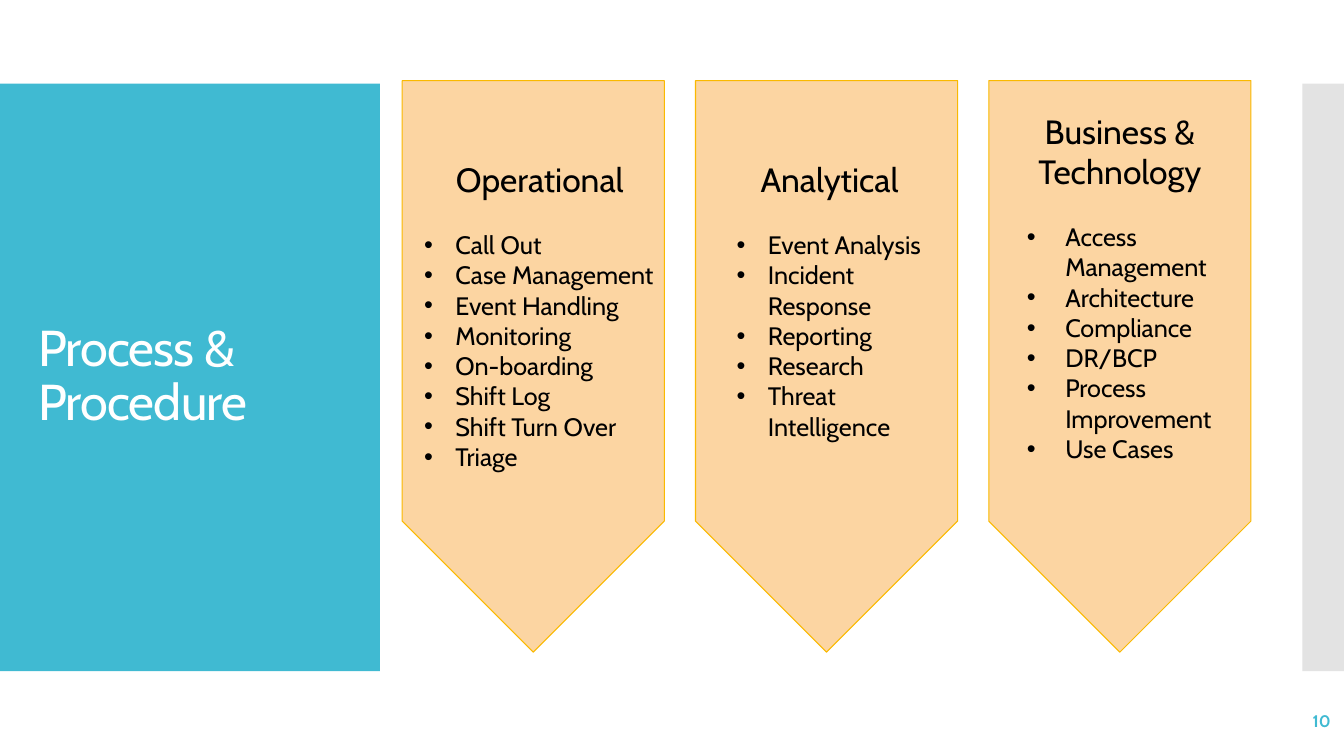
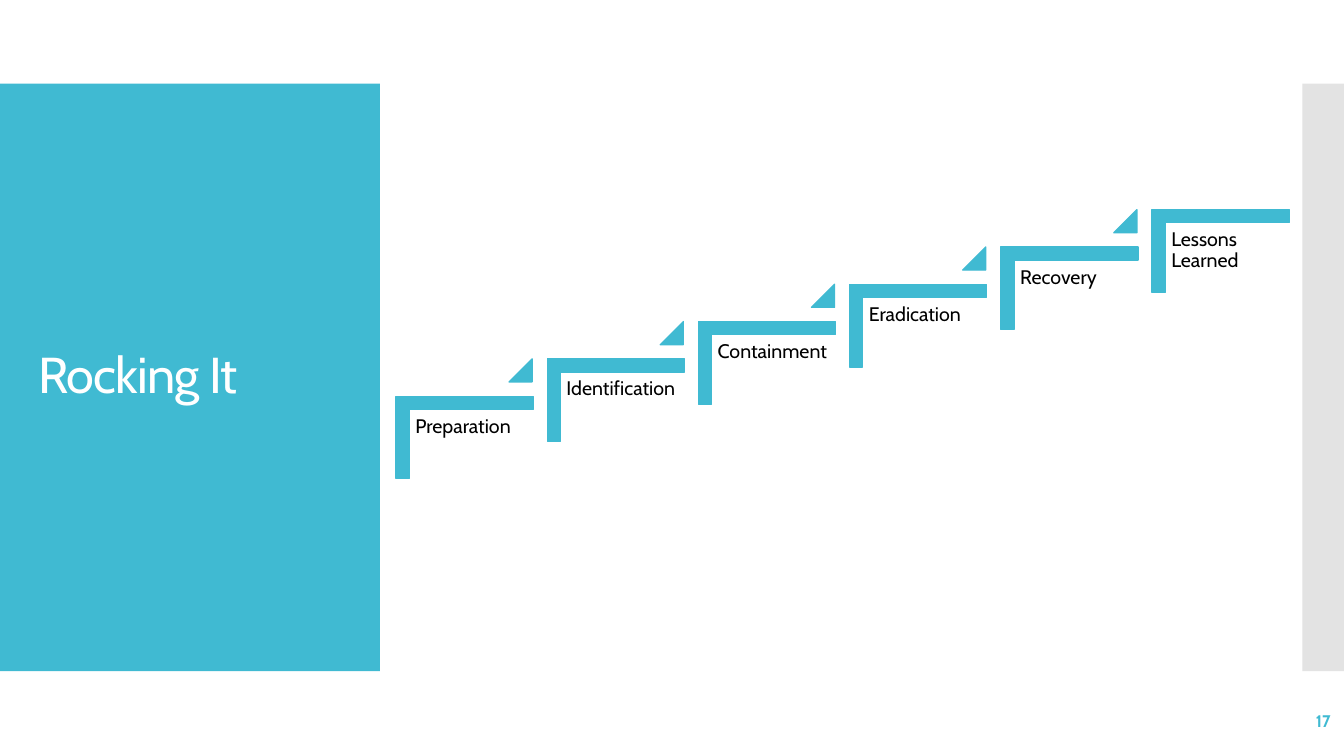
from pptx import Presentation
from pptx.dml.color import RGBColor
from pptx.enum.shapes import MSO_SHAPE as SHAPE
from pptx.enum.text import MSO_ANCHOR as ANCHOR, PP_ALIGN as ALIGN
from pptx.oxml.ns import qn
from pptx.util import Pt
from lxml.etree import SubElement

PX = 9144
FONT = "Cabin"
COLORS = {
    "teal": "40BAD2", "grey": "E3E3E3", "peach": "FCD5A2",
    "gold": "FAB900", "white": "FFFFFF", "black": "000000",
}
STYLES = {
    "title": {"size": 36, "color": "white"},
    "heading": {"size": 24, "color": "black"},
    "item": {"size": 18, "color": "black"},
    "step": {"size": 14, "color": "black"},
    "number": {"size": 12, "color": "teal", "bold": True},
}
BANDS = [((0, 83, 377, 583), "teal"), ((1292, 83, 42, 583), "grey")]
TITLE_BOX = (28, 123, 322, 503)
NUMBER_BOX = (1163, 695, 167, 40)

COLUMNS = [
    {"heading": "Operational", "box": (411, 153, 249, 384), "indent": 31,
     "items": ["Call Out", "Case Management", "Event Handling", "Monitoring",
               "On-boarding", "Shift Log", "Shift Turn Over", "Triage"]},
    {"heading": "Analytical", "box": (721, 153, 204, 293), "indent": 31,
     "items": ["Event Analysis", "Incident Response", "Reporting", "Research",
               "Threat Intelligence"]},
    {"heading": "Business & Technology", "box": (1009, 105, 204, 364), "indent": 38,
     "items": ["Access Management", "Architecture", "Compliance", "DR/BCP",
               "Process Improvement", "Use Cases"]},
]
ARROW = {"left": 399, "top": 80, "width": 260, "height": 567, "pitch": 291}

STEPS = ["Preparation", "Identification", "Containment", "Eradication",
         "Recovery", "Lessons Learned"]
STAIR = {"left": 393, "top": 393, "width": 136, "height": 82, "bar": 13,
         "run": 150, "rise": 37}


def px(*lengths):
    return [round(n * PX) for n in lengths]


def rgb(name):
    return RGBColor.from_string(COLORS[name])


def paint(sp, fill, line=None, weight=0.75):
    sp.shadow.inherit = False
    sp.fill.solid()
    sp.fill.fore_color.rgb = rgb(fill)
    if line:
        sp.line.color.rgb = rgb(line)
        sp.line.width = Pt(weight)
    else:
        sp.line.fill.background()


def add_down_arrow(s, x, y, w, h):
    box = (x + (w - h) / 2, y + (h - w) / 2, h, w)
    sp = s.shapes.add_shape(SHAPE.PENTAGON, *px(*box))
    sp.rotation = 90
    paint(sp, "peach", "gold")


def add_outline(s, points):
    start, *rest = [tuple(px(*point)) for point in points]
    builder = s.shapes.build_freeform(*start)
    builder.add_line_segments(rest, close=True)
    paint(builder.convert_to_shape(), "teal", "teal", 0.85)


def add_box(s, box, anchor=ANCHOR.TOP, inset=None):
    tf = s.shapes.add_textbox(*px(*box)).text_frame
    tf.word_wrap = True
    tf.vertical_anchor = anchor
    if inset is not None:
        for side in ("left", "top", "right", "bottom"):
            setattr(tf, f"margin_{side}", px(inset)[0])
    return tf


def write(p, text, style, **layout):
    for name, value in layout.items():
        setattr(p, name, value)
    r = p.add_run()
    r.text = text
    look = STYLES[style]
    values = {"name": FONT, "size": Pt(look["size"]), "bold": look.get("bold", False)}
    for name, value in values.items():
        setattr(r.font, name, value)
    r.font.color.rgb = rgb(look["color"])
    return r


def add_bullet(p, indent):
    pPr = p._p.get_or_add_pPr()
    margin = px(indent)[0]
    pPr.set("marL", str(margin))
    pPr.set("indent", str(-margin))
    SubElement(pPr, qn("a:buFont"), typeface="Arial")
    SubElement(pPr, qn("a:buChar"), char="•")


def add_page(prs, title, number):
    s = prs.slides.add_slide(prs.slide_layouts[6])
    for box, fill in BANDS:
        paint(s.shapes.add_shape(SHAPE.RECTANGLE, *px(*box)), fill)
    tf = add_box(s, TITLE_BOX, ANCHOR.MIDDLE)
    r = write(tf.paragraphs[0], title, "title", line_spacing=0.9)
    r._r.get_or_add_rPr().set("spc", "-60")
    tf = add_box(s, NUMBER_BOX, ANCHOR.MIDDLE)
    write(tf.paragraphs[0], str(number), "number", alignment=ALIGN.RIGHT)
    return s


def add_columns(s):
    for i, column in enumerate(COLUMNS):
        add_down_arrow(s, ARROW["left"] + i * ARROW["pitch"], ARROW["top"],
                       ARROW["width"], ARROW["height"])
        tf = add_box(s, column["box"])
        write(tf.paragraphs[0], column["heading"], "heading",
              alignment=ALIGN.CENTER, space_after=Pt(21.5))
        for item in column["items"]:
            p = tf.add_paragraph()
            write(p, item, "item")
            add_bullet(p, column["indent"])


def add_stairs(s):
    w, h, bar = STAIR["width"], STAIR["height"], STAIR["bar"]
    for i, step in enumerate(STEPS):
        x = STAIR["left"] + i * STAIR["run"]
        y = STAIR["top"] - i * STAIR["rise"]
        add_outline(s, [(x, y), (x + w, y), (x + w, y + bar), (x + bar, y + bar),
                        (x + bar, y + h), (x, y + h)])
        tf = add_box(s, (x + bar, y + 14, 122, 107), inset=6)
        write(tf.paragraphs[0], step, "step", line_spacing=0.9)
        if i < len(STEPS) - 1:
            box = (x + 112, y - STAIR["rise"], 23, 23)
            sp = s.shapes.add_shape(SHAPE.ISOSCELES_TRIANGLE, *px(*box))
            sp.adjustments[0] = 1
            paint(sp, "teal", "teal", 0.85)


def main():
    prs = Presentation()
    prs.slide_width, prs.slide_height = px(1333.33, 750)
    add_columns(add_page(prs, "Process & Procedure", 10))
    add_stairs(add_page(prs, "Rocking It", 17))
    prs.save("out.pptx")


if __name__ == "__main__":
    main()
